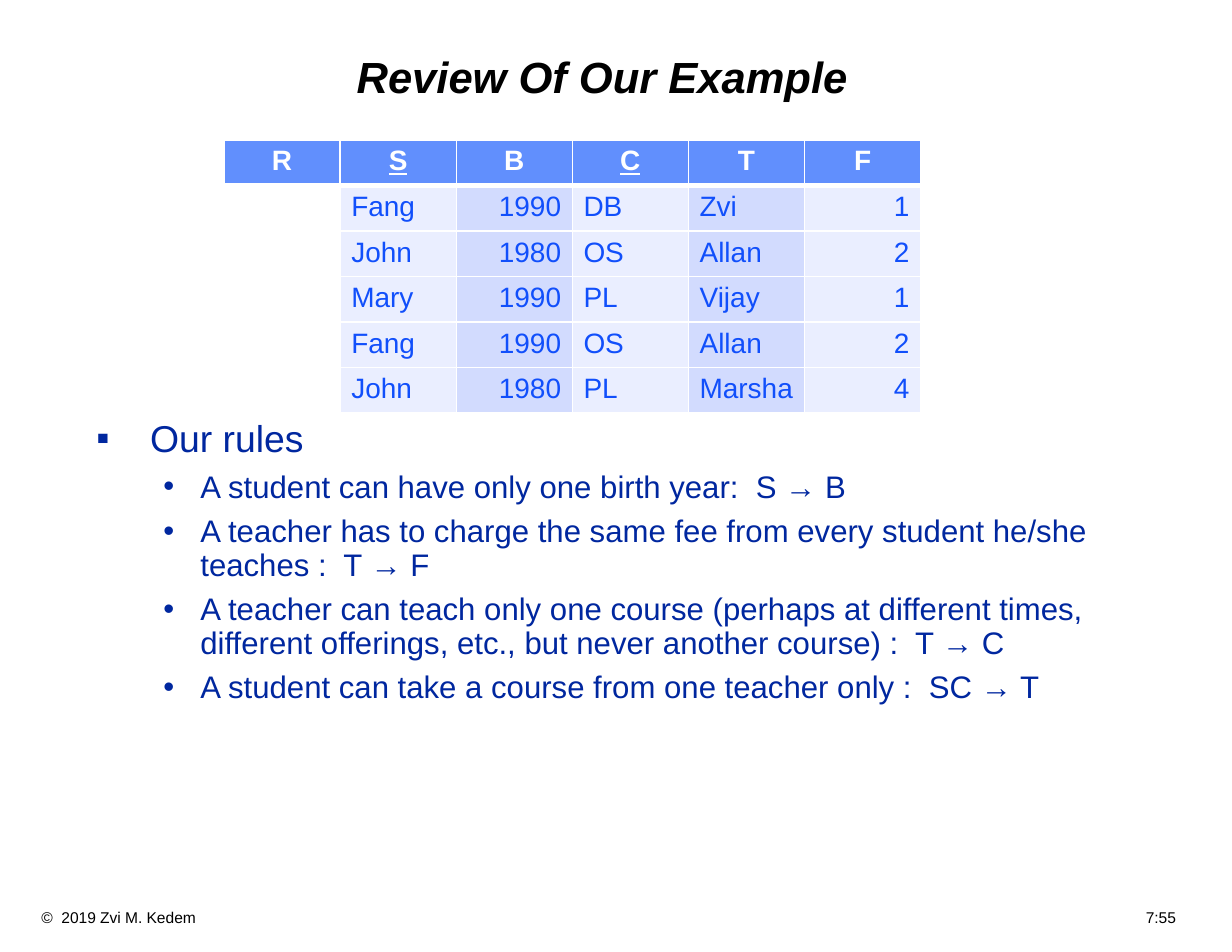
from dataclasses import dataclass

from lxml import etree
from pptx import Presentation
from pptx.dml.color import RGBColor
from pptx.enum import text as t
from pptx.oxml import ns
from pptx.util import Inches, Pt


@dataclass(frozen=True)
class Theme:
    font: str = "Arial"
    black: str = "000000"
    white: str = "FFFFFF"
    navy: str = "00279F"
    blue: str = "114FFB"
    header: str = "618FFD"
    bands: tuple = ("EAEEFF", "D2DBFE")
    title: int = 28
    rule_sizes: tuple = (24, 20)
    cell: int = 18
    footer: int = 10


THEME = Theme()
HEADERS = "RSBCTF"
KEYS = "SC"
ROWS = [
    ("", "Fang", "1990", "DB", "Zvi", "1"),
    ("", "John", "1980", "OS", "Allan", "2"),
    ("", "Mary", "1990", "PL", "Vijay", "1"),
    ("", "Fang", "1990", "OS", "Allan", "2"),
    ("", "John", "1980", "PL", "Marsha", "4"),
]
RULES = [
    (0, "Our rules"),
    (1, "A student can have only one birth year:  S → B"),
    (1, "A teacher has to charge the same fee from every student he/she teaches :  T → F"),
    (1, "A teacher can teach only one course (perhaps at different times, "
        "different offerings, etc., but never another course) :  T → C"),
    (1, "A student can take a course from one teacher only :  SC → T"),
]
BULLETS = ((0.48, -0.48, "▪"), (0.93, -0.33, "•"))


def set_all(obj, values):
    for name, value in values.items():
        setattr(obj, name, value)


def sub(parent, tag, **attrs):
    return etree.SubElement(parent, ns.qn(tag), {k: str(v) for k, v in attrs.items()})


def style(font, size, color, **extra):
    set_all(font, {"name": THEME.font, "size": Pt(size), **extra})
    font.color.rgb = RGBColor.from_string(color)


def frame(tf, x=0.11, y=0.06, **extra):
    set_all(tf, {"word_wrap": True, "auto_size": t.MSO_AUTO_SIZE.NONE,
                 "margin_left": Inches(x), "margin_right": Inches(x),
                 "margin_top": Inches(y), "margin_bottom": Inches(y), **extra})


def add_title(s, text):
    sp = s.shapes.title
    set_all(sp, {"left": Inches(0.75), "top": Inches(0.25),
                 "width": Inches(9.25), "height": Inches(0.92)})
    tf = sp.text_frame
    frame(tf, vertical_anchor=t.MSO_ANCHOR.MIDDLE)
    p = tf.paragraphs[0]
    set_all(p, {"alignment": t.PP_ALIGN.CENTER, "line_spacing": 0.9})
    r = p.add_run()
    r.text = text
    style(r.font, THEME.title, THEME.black, bold=True, italic=True)


def add_rules(s):
    tf = s.shapes.add_textbox(Inches(0.75), Inches(3.69), Inches(9.33), Inches(4.31)).text_frame
    frame(tf)
    for i, (level, text) in enumerate(RULES):
        p = tf.add_paragraph() if i else tf.paragraphs[0]
        margin, indent, char = BULLETS[level]
        pPr = p._p.get_or_add_pPr()
        pPr.set("marL", str(Inches(margin)))
        pPr.set("indent", str(Inches(indent)))
        sub(sub(pPr, "a:buClr"), "a:srgbClr", val=THEME.navy)
        sub(pPr, "a:buFont", typeface=THEME.font)
        sub(pPr, "a:buChar", char=char)
        set_all(p, {"level": level, "line_spacing": 0.9, "space_before": Pt(7 if i else 0)})
        r = p.add_run()
        r.text = text
        style(r.font, THEME.rule_sizes[level], THEME.navy)


def fill_cell(cell, text, fill, align, borders, color, **extra):
    tcPr = cell._tc.get_or_add_tcPr()
    for side, width in zip("LRTB", borders):
        ln = sub(tcPr, "a:ln" + side, w=Pt(width))
        sub(sub(ln, "a:solidFill"), "a:srgbClr", val=THEME.white)
    cell.fill.solid()
    cell.fill.fore_color.rgb = RGBColor.from_string(fill)
    p = cell.text_frame.paragraphs[0]
    p.alignment = align
    style(p.font, THEME.cell, color)
    if text:
        r = p.add_run()
        r.text = text
        style(r.font, THEME.cell, color, **extra)


def add_example(s):
    n_rows, n_cols = len(ROWS) + 1, len(HEADERS)
    table = s.shapes.add_table(n_rows, n_cols, Inches(2), Inches(1.25),
                               Inches(6.22), Inches(2.44)).table
    for c, name in enumerate(HEADERS):
        fill_cell(table.cell(0, c), name, THEME.header, t.PP_ALIGN.CENTER, (1, 1, 1, 3),
                  THEME.white, bold=True, underline=name in KEYS)
    for i, row in enumerate(ROWS, 1):
        for c, value in enumerate(row):
            fill = THEME.bands[(c + 1) % 2] if c else THEME.white
            align = t.PP_ALIGN.RIGHT if value.isdigit() else t.PP_ALIGN.LEFT
            fill_cell(table.cell(i, c), value, fill, align,
                      (1, 1, 3 if i == 1 else 1, 1), THEME.blue, bold=False)


def add_footer(s, left, right):
    tf = s.shapes.add_textbox(0, Inches(8.06), Inches(11), Inches(0.27)).text_frame
    frame(tf, x=0.37, y=0.05)
    p = tf.paragraphs[0]
    tabs = sub(p._p.get_or_add_pPr(), "a:tabLst")
    sub(tabs, "a:tab", pos=Inches(10.13), algn="r")
    r = p.add_run()
    r.text = f"{left}\t{right}"
    style(r.font, THEME.footer, THEME.black)


def main():
    prs = Presentation()
    set_all(prs, {"slide_width": Inches(11), "slide_height": Inches(8.5)})
    s = prs.slides.add_slide(prs.slide_layouts[5])
    add_footer(s, "©  2019 Zvi M. Kedem", "7:55")
    add_title(s, "Review Of Our Example")
    add_rules(s)
    add_example(s)
    prs.save("out.pptx")


if __name__ == "__main__":
    main()
